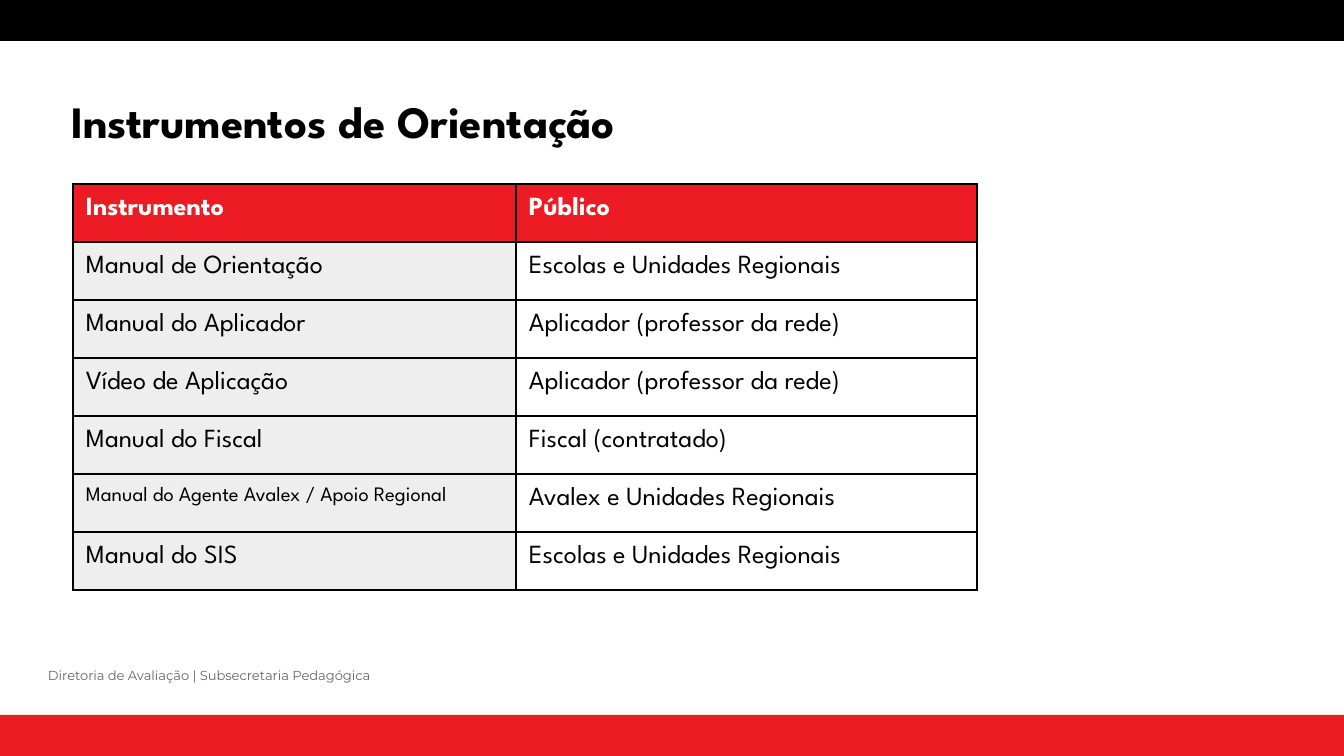
from dataclasses import dataclass

from pptx import Presentation
from pptx.dml.color import RGBColor
from pptx.enum.shapes import MSO_SHAPE as Preset
from pptx.enum.text import MSO_ANCHOR as Anchor, PP_ALIGN as Align
from pptx.oxml import parse_xml
from pptx.oxml.ns import nsdecls
from pptx.util import Emu, Pt

EMU_PER_PX = 9144000 / 1344
COLORS = {
    "red": "ED1C24",
    "black": "000000",
    "white": "FFFFFF",
    "footer": "666666",
    "first_column": "EEEEEE",
}
HEADING_FONT = "League Spartan"
FOOTER_FONT = "Montserrat"
CELL_SIZE = 14
SMALL_CELL_SIZE = 11


@dataclass(frozen=True)
class Box:
    left: int
    top: int
    width: int
    height: int

    def emu(self) -> tuple[Emu, ...]:
        return tuple(px(value) for value in (self.left, self.top, self.width, self.height))


@dataclass(frozen=True)
class Style:
    font: str
    size: int
    color: str
    bold: bool = False


@dataclass(frozen=True)
class Bar:
    box: Box
    color: str


@dataclass(frozen=True)
class Label:
    box: Box
    text: str
    style: Style
    inset_y: int


@dataclass(frozen=True)
class Guide:
    instrument: str
    audience: str
    instrument_size: int = CELL_SIZE


BARS = [
    Bar(Box(-3, 715, 1347, 42), "red"),
    Bar(Box(-1, 0, 1347, 41), "black"),
]
LABELS = [
    Label(Box(35, 660, 1027, 51), "Diretoria de Avaliação | Subsecretaria Pedagógica",
          Style(FOOTER_FONT, 7, "footer"), 13),
    Label(Box(58, 87, 664, 67), "Instrumentos de Orientação",
          Style(HEADING_FONT, 24, "black", True), 7),
]
GUIDES = [
    Guide("Instrumento", "Público"),
    Guide("Manual de Orientação", "Escolas e Unidades Regionais"),
    Guide("Manual do Aplicador", "Aplicador (professor da rede)"),
    Guide("Vídeo de Aplicação", "Aplicador (professor da rede)"),
    Guide("Manual do Fiscal", "Fiscal (contratado)"),
    Guide("Manual do Agente Avalex / Apoio Regional", "Avalex e Unidades Regionais",
          SMALL_CELL_SIZE),
    Guide("Manual do SIS", "Escolas e Unidades Regionais"),
]
TABLE_LEFT, TABLE_TOP = 73, 184
COLUMN_WIDTHS = (443, 461)
ROW_HEIGHT = 58
INSET = 13


def px(value: int) -> Emu:
    return Emu(round(value * EMU_PER_PX))


def rgb(name: str) -> RGBColor:
    return RGBColor.from_string(COLORS[name])


def set_text(text_frame, text: str, style: Style) -> None:
    text_frame.text = text
    paragraph = text_frame.paragraphs[0]
    paragraph.alignment = Align.LEFT
    font = paragraph.runs[0].font
    font.name = style.font
    font.size = Pt(style.size)
    font.bold = style.bold
    font.color.rgb = rgb(style.color)


def draw_bar(slide, bar: Bar) -> None:
    shape = slide.shapes.add_shape(Preset.RECTANGLE, *bar.box.emu())
    shape.shadow.inherit = False
    shape.fill.solid()
    shape.fill.fore_color.rgb = rgb(bar.color)
    shape.line.fill.background()


def draw_label(slide, label: Label) -> None:
    text_frame = slide.shapes.add_textbox(*label.box.emu()).text_frame
    text_frame.word_wrap = True
    text_frame.vertical_anchor = Anchor.TOP
    text_frame.margin_left = text_frame.margin_right = px(INSET)
    text_frame.margin_top = text_frame.margin_bottom = px(label.inset_y)
    set_text(text_frame, label.text, label.style)


def add_borders(cell) -> None:
    """Put a thin black line on all four sides, ahead of the cell fill."""
    properties = cell._tc.get_or_add_tcPr()
    for position, side in enumerate(("lnL", "lnR", "lnT", "lnB")):
        properties.insert(position, parse_xml(
            f'<a:{side} {nsdecls("a")} w="{Pt(0.75)}"><a:solidFill>'
            f'<a:srgbClr val="{COLORS["black"]}"/></a:solidFill></a:{side}>'))


def draw_cell(cell, text: str, style: Style, fill: str) -> None:
    cell.margin_left = cell.margin_right = px(INSET)
    cell.margin_top = cell.margin_bottom = px(INSET)
    cell.vertical_anchor = Anchor.TOP
    set_text(cell.text_frame, text, style)
    cell.fill.solid()
    cell.fill.fore_color.rgb = rgb(fill)
    add_borders(cell)


def draw_table(slide, guides: list[Guide]) -> None:
    box = Box(TABLE_LEFT, TABLE_TOP, sum(COLUMN_WIDTHS), ROW_HEIGHT * len(guides))
    table = slide.shapes.add_table(len(guides), len(COLUMN_WIDTHS), *box.emu()).table
    for column, width in zip(table.columns, COLUMN_WIDTHS):
        column.width = px(width)
    for index, guide in enumerate(guides):
        table.rows[index].height = px(ROW_HEIGHT)
        header = index == 0
        color = "white" if header else "black"
        fills = ("red", "red") if header else ("first_column", "white")
        texts = (guide.instrument, guide.audience)
        sizes = (guide.instrument_size, CELL_SIZE)
        for column, (text, size, fill) in enumerate(zip(texts, sizes, fills)):
            style = Style(HEADING_FONT, size, color, header)
            draw_cell(table.cell(index, column), text, style, fill)


def main() -> None:
    presentation = Presentation()
    presentation.slide_width = px(1344)
    presentation.slide_height = px(756)
    slide = presentation.slides.add_slide(presentation.slide_layouts[6])
    for bar in BARS:
        draw_bar(slide, bar)
    for label in LABELS:
        draw_label(slide, label)
    draw_table(slide, GUIDES)
    presentation.save("out.pptx")


if __name__ == "__main__":
    main()
